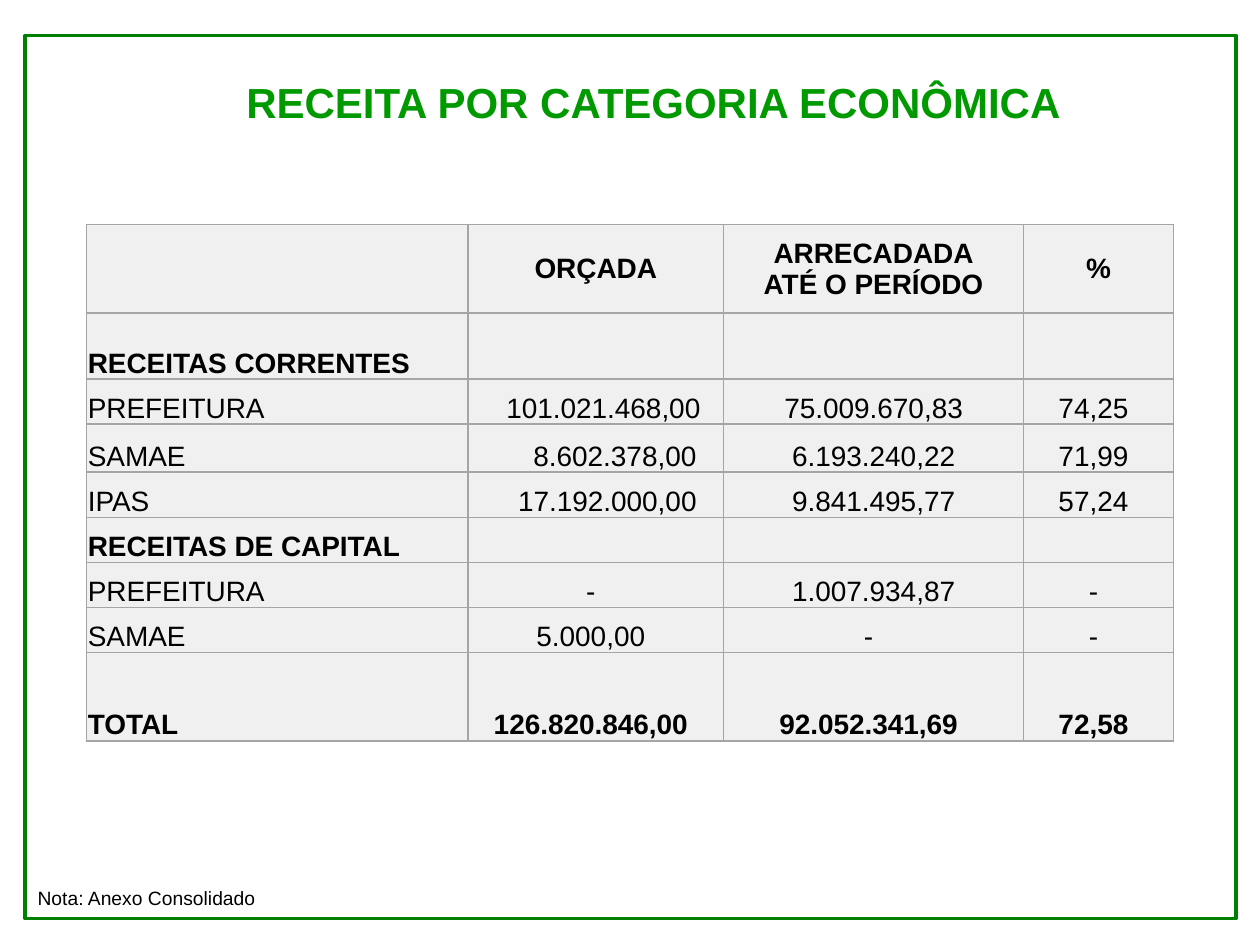
from typing import NamedTuple

from lxml.etree import SubElement
from pptx import Presentation
from pptx.dml.color import RGBColor
from pptx.enum.shapes import MSO_SHAPE as Shape
from pptx.enum.text import MSO_ANCHOR as Anchor, PP_ALIGN as Align
from pptx.oxml.ns import qn
from pptx.util import Pt

GREEN, TITLE_GREEN, BLACK = "008000", "009900", "000000"
CELL_GREY, BORDER_GREY = "F0F0F0", "A5A5A5"
THIN, WIDE = 0.72, 6.48


class Entry(NamedTuple):
    text: str = ""
    right: float = WIDE
    left: float = THIN


class Row(NamedTuple):
    label: str
    height: float
    entries: tuple[Entry, ...] = (Entry(),) * 3
    bold: bool = False
    anchor: Anchor = Anchor.BOTTOM
    spacing: float = 1.0


COLUMN_WIDTHS = (218, 146, 171.5, 85.5)
ROWS = (
    Row("", 50.6,
        (Entry("ORÇADA", THIN), Entry("ARRECADADA\nATÉ O PERÍODO", THIN), Entry("%", THIN)),
        bold=True, anchor=Anchor.MIDDLE),
    Row("RECEITAS CORRENTES", 37.8, bold=True, spacing=1.5),
    Row("PREFEITURA", 25.8,
        (Entry("101.021.468,00", THIN, 9.3), Entry("75.009.670,83", THIN), Entry("74,25"))),
    Row("SAMAE", 27.4,
        (Entry("8.602.378,00", THIN, 22.5), Entry("6.193.240,22", THIN), Entry("71,99"))),
    Row("IPAS", 25.8,
        (Entry("17.192.000,00", THIN, 13.9), Entry("9.841.495,77", THIN), Entry("57,24"))),
    Row("RECEITAS DE CAPITAL", 25.8, bold=True),
    Row("PREFEITURA", 25.8, (Entry("-"), Entry("1.007.934,87", THIN), Entry("-"))),
    Row("SAMAE", 25.8, (Entry("5.000,00"), Entry("-"), Entry("-"))),
    Row("TOTAL", 50.4,
        (Entry("126.820.846,00"), Entry("92.052.341,69"), Entry("72,58")), bold=True),
)


def paint(color_format, color: str) -> None:
    color_format.rgb = RGBColor.from_string(color)


def write(frame, text: str, size: float, color: str = BLACK, bold: bool = False,
          align: Align = Align.LEFT, spacing: float = 1.0) -> None:
    frame.text = text
    for paragraph in frame.paragraphs:
        paragraph.alignment = align
        paragraph.line_spacing = spacing
        font = paragraph.font
        font.name, font.size, font.bold = "Arial", Pt(size), bold
        paint(font.color, color)


def add_borders(cell) -> None:
    properties = cell._tc.get_or_add_tcPr()
    for side in ("a:lnL", "a:lnR", "a:lnT", "a:lnB"):
        line = SubElement(properties, qn(side), w=str(Pt(1)))
        SubElement(SubElement(line, qn("a:solidFill")), qn("a:srgbClr"), val=BORDER_GREY)


def fill_cell(cell, entry: Entry, row: Row, align: Align) -> None:
    add_borders(cell)
    cell.fill.solid()
    paint(cell.fill.fore_color, CELL_GREY)
    cell.vertical_anchor = row.anchor
    cell.margin_left, cell.margin_right = Pt(entry.left), Pt(entry.right)
    cell.margin_top, cell.margin_bottom = Pt(THIN), Pt(0)
    write(cell.text_frame, entry.text, 16, bold=row.bold, align=align, spacing=row.spacing)


def add_frame(slide) -> None:
    frame = slide.shapes.add_shape(Shape.RECTANGLE, Pt(14.4), Pt(20.2), Pt(692), Pt(504.7))
    frame.shadow.inherit = False
    frame.fill.background()
    paint(frame.line.color, GREEN)
    frame.line.width = Pt(2)


def add_revenue_table(slide) -> None:
    table = slide.shapes.add_table(
        len(ROWS), len(COLUMN_WIDTHS), Pt(49.5), Pt(128.2),
        Pt(sum(COLUMN_WIDTHS)), Pt(sum(row.height for row in ROWS))).table
    table.first_row = table.horz_banding = False
    for column, width in zip(table.columns, COLUMN_WIDTHS):
        column.width = Pt(width)
    for table_row, row in zip(table.rows, ROWS):
        table_row.height = Pt(row.height)
        label_cell, *entry_cells = table_row.cells
        fill_cell(label_cell, Entry(row.label), row, Align.LEFT)
        for cell, entry in zip(entry_cells, row.entries):
            fill_cell(cell, entry, row, Align.CENTER)


def main() -> None:
    """Build the slide of revenue by economic category."""
    deck = Presentation()
    deck.slide_width, deck.slide_height = Pt(720), Pt(540)
    slide = deck.slides.add_slide(deck.slide_layouts[6])
    add_frame(slide)

    title = slide.shapes.add_textbox(Pt(49.7), Pt(43.2), Pt(620.6), Pt(65.5)).text_frame
    title.word_wrap = True
    title.margin_left = Pt(34)
    write(title, "RECEITA POR CATEGORIA ECONÔMICA", 24, TITLE_GREEN, True, Align.CENTER, 0.9)

    add_revenue_table(slide)

    note = slide.shapes.add_textbox(Pt(14.4), Pt(502.6), Pt(187.2), Pt(20.9)).text_frame
    note.word_wrap = True
    write(note, "Nota: Anexo Consolidado", 11)
    deck.save("out.pptx")


if __name__ == "__main__":
    main()
